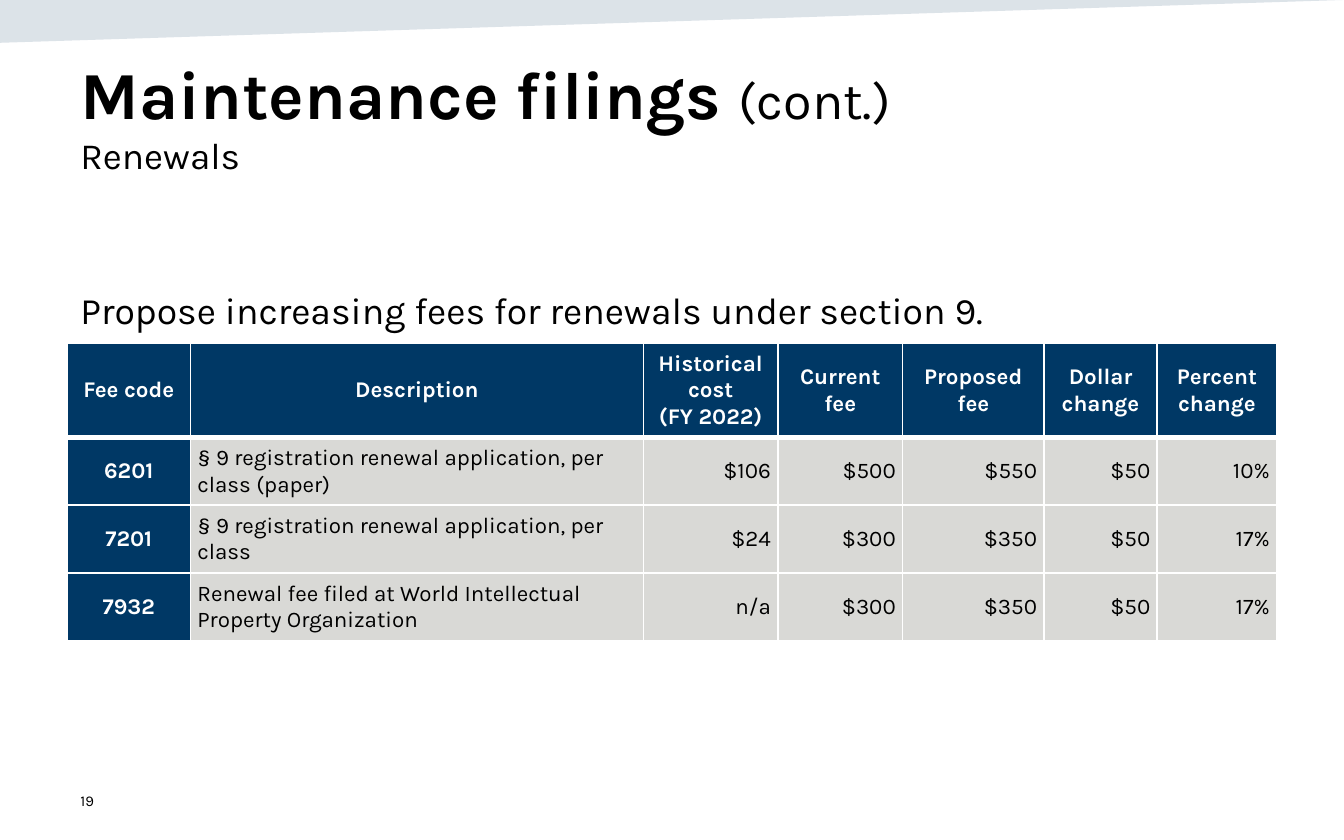
from dataclasses import dataclass

from lxml.etree import SubElement
from pptx import Presentation
from pptx.dml.color import RGBColor
from pptx.enum.text import MSO_ANCHOR as Anchor, PP_ALIGN as Align
from pptx.oxml.ns import qn
from pptx.util import Cm, Pt

NAVY = RGBColor(0x00, 0x38, 0x65)
STEEL = RGBColor(0x16, 0x44, 0x69)
GREY = RGBColor(0xD9, 0xD9, 0xD6)
WHITE = RGBColor(0xFF, 0xFF, 0xFF)
BLACK = RGBColor(0x00, 0x00, 0x00)
FONT = "Karla"
LEFT, WIDTH = 1.27, 22.86  # shared content column, in cm


@dataclass(frozen=True)
class Column:
    heading: str
    width: float
    align: Align = Align.RIGHT


@dataclass(frozen=True)
class CellStyle:
    fill: RGBColor
    color: RGBColor
    bold: bool
    bottom_rule: float = 1
    spacing: float = 6


HEADER = CellStyle(NAVY, WHITE, True, bottom_rule=3, spacing=0)
CODE = CellStyle(NAVY, WHITE, True)
DETAIL = CellStyle(GREY, BLACK, False)

COLUMNS = [
    Column("Fee code", 2.33, Align.CENTER),
    Column("Description", 8.56, Align.LEFT),
    Column("Historical cost\n(FY 2022)", 2.54),
    Column("Current fee", 2.36),
    Column("Proposed fee", 2.67),
    Column("Dollar change", 2.14),
    Column("Percent change", 2.26),
]
FEES = [
    ("6201", "§ 9 registration renewal application, per class (paper)",
     "$106", "$500", "$550", "$50", "10%"),
    ("7201", "§ 9 registration renewal application, per class",
     "$24", "$300", "$350", "$50", "17%"),
    ("7932", "Renewal fee filed at World Intellectual Property Organization",
     "n/a", "$300", "$350", "$50", "17%"),
]


def set_font(font, size: float, color: RGBColor = BLACK, bold: bool = False) -> None:
    font.name, font.size, font.bold = FONT, Pt(size), bold
    font.color.rgb = color


def add_text_frame(slide, top: float, width: float, height: float):
    frame = slide.shapes.add_textbox(Cm(LEFT), Cm(top), Cm(width), Cm(height)).text_frame
    frame.word_wrap = True
    return frame


def add_border(cell, side: str, points: float) -> None:
    line = SubElement(cell._tc.get_or_add_tcPr(), qn(f"a:ln{side}"), w=str(Pt(points)))
    fill = SubElement(line, qn("a:solidFill"))
    SubElement(fill, qn("a:srgbClr"), val=str(WHITE))


def fill_cell(cell, text: str, align: Align, style: CellStyle, top_rule: float) -> None:
    # Borders come before the fill in the cell properties
    for side, points in zip("LRTB", (1, 1, top_rule, style.bottom_rule)):
        add_border(cell, side, points)
    cell.fill.solid()
    cell.fill.fore_color.rgb = style.fill
    cell.vertical_anchor = Anchor.MIDDLE
    cell.margin_left = cell.margin_right = cell.margin_top = cell.margin_bottom = Cm(0.13)
    cell.text = text
    for paragraph in cell.text_frame.paragraphs:
        paragraph.alignment = align
        paragraph.space_before = paragraph.space_after = Pt(style.spacing)
        set_font(paragraph.font, 12, style.color, style.bold)


def add_fee_table(slide) -> None:
    table = slide.shapes.add_table(len(FEES) + 1, len(COLUMNS), Cm(LEFT), Cm(6.49),
                                   Cm(WIDTH), Cm(5.48)).table
    table.first_row = table.horz_banding = False
    for row, height in zip(table.rows, [1.73] + [1.25] * len(FEES)):
        row.height = Cm(height)
    for c, column in enumerate(COLUMNS):
        table.columns[c].width = Cm(column.width)
        fill_cell(table.cell(0, c), column.heading, Align.CENTER, HEADER, 1)
        for r, fee in enumerate(FEES, start=1):
            fill_cell(table.cell(r, c), fee[c], column.align, DETAIL if c else CODE,
                      HEADER.bottom_rule if r == 1 else 1)


def add_wedge(slide) -> None:
    builder = slide.shapes.build_freeform(Cm(0), Cm(0))
    builder.add_line_segments([(Cm(0), Cm(0.81)), (Cm(25.4), Cm(0))])
    wedge = builder.convert_to_shape()
    wedge.shadow.inherit = False
    wedge.line.fill.background()
    wedge.fill.solid()
    wedge.fill.fore_color.rgb = STEEL
    color = wedge._element.spPr.find(f"{qn('a:solidFill')}/{qn('a:srgbClr')}")
    SubElement(color, qn("a:alpha"), val="15000")


def main() -> None:
    prs = Presentation()
    prs.slide_width, prs.slide_height = Cm(25.4), Cm(15.88)
    slide = prs.slides.add_slide(prs.slide_layouts[6])

    # Top band
    add_wedge(slide)

    # Page number
    page_number = add_text_frame(slide, 14.71, 5.72, 0.84)
    page_number.vertical_anchor = Anchor.MIDDLE
    page_number.text = "19"
    set_font(page_number.paragraphs[0].font, 8)

    # Title and subtitle
    title = add_text_frame(slide, 0.86, WIDTH, 2.64).paragraphs[0]
    for text, size, bold in (("Maintenance filings ", 36, True),
                             ("(cont.)", 27.9, False), ("Renewals", 19.8, False)):
        if text == "Renewals":
            title.add_line_break()
        run = title.add_run()
        run.text = text
        set_font(run.font, size, bold=bold)

    # Proposal
    proposal = add_text_frame(slide, 5.13, WIDTH, 9.7).paragraphs[0]
    proposal.text = "Propose increasing fees for renewals under section 9."
    proposal.line_spacing = 1.2
    proposal.space_before = Pt(9)
    set_font(proposal.font, 20)

    # Fee table
    add_fee_table(slide)

    prs.save("out.pptx")


if __name__ == "__main__":
    main()
